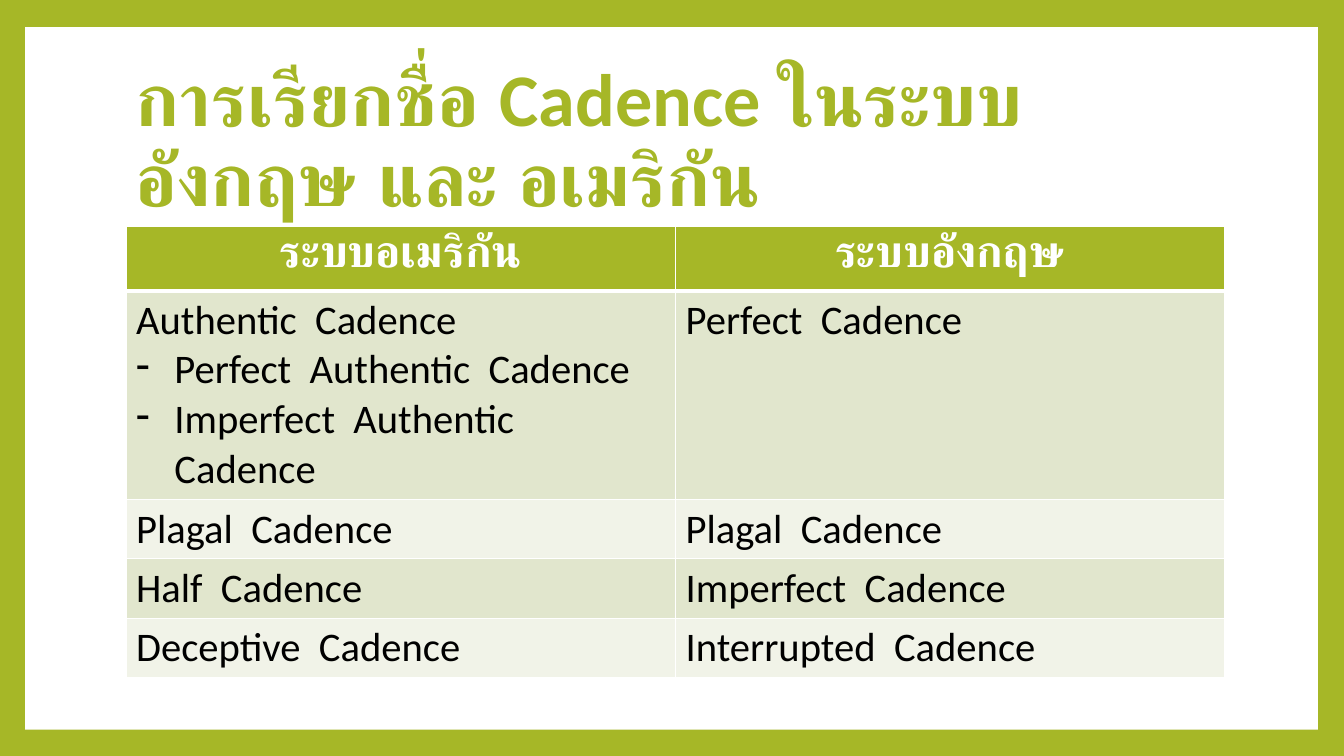
import pptx
import pptx.util
import pptx.dml.color
import pptx.enum.shapes
import pptx.enum.text
import pptx.oxml
import pptx.oxml.ns
from dataclasses import dataclass
from lxml import etree

Inches = pptx.util.Inches
Pt = pptx.util.Pt


@dataclass(frozen=True)
class Theme:
    green: str = "A6B727"
    band_dark: str = "E1E6CD"
    band_light: str = "F1F3E8"
    white: str = "FFFFFF"
    black: str = "000000"
    font: str = "Calibri"
    title_size: int = 53
    header_size: int = 32
    body_size: int = 29


THEME = Theme()

# American name (bulleted lines start with "- "), British name
HEADER = ("ระบบอเมริกัน", "ระบบอังกฤษ")
CADENCES = [
    ("Authentic  Cadence\n- Perfect  Authentic  Cadence\n- Imperfect  Authentic  Cadence",
     "Perfect  Cadence"),
    ("Plagal  Cadence", "Plagal  Cadence"),
    ("Half  Cadence", "Imperfect  Cadence"),
    ("Deceptive  Cadence", "Interrupted  Cadence"),
]
ROW_HEIGHTS = [0.54, 2.07, 0.59, 0.59, 0.59]


def rgb(color):
    return pptx.dml.color.RGBColor.from_string(color)


def style_runs(paragraph, size, color, bold=False):
    for run in paragraph.runs:
        run.font.name = THEME.font
        run.font.size = Pt(size)
        run.font.bold = bold
        run.font.color.rgb = rgb(color)


def add_dash(paragraph):
    properties = paragraph._p.get_or_add_pPr()
    properties.set("marL", str(Inches(0.38)))
    properties.set("indent", str(-Inches(0.38)))
    bullet = etree.SubElement(properties, pptx.oxml.ns.qn("a:buChar"))
    bullet.set("char", "-")


def set_cell(cell, fill, bottom_width=1):
    # Borders come before the fill in the cell properties
    properties = cell._tc.get_or_add_tcPr()
    for side, width in (("L", 1), ("R", 1), ("T", 1), ("B", bottom_width)):
        properties.append(pptx.oxml.parse_xml(
            f'<a:ln{side} {pptx.oxml.ns.nsdecls("a")} w="{Pt(width)}"><a:solidFill>'
            f'<a:srgbClr val="{THEME.white}"/></a:solidFill></a:ln{side}>'))
    cell.fill.solid()
    cell.fill.fore_color.rgb = rgb(fill)


def draw_frame(slide, left, top, width, height):
    slide.background.fill.solid()
    slide.background.fill.fore_color.rgb = rgb(THEME.green)
    panel = slide.shapes.add_shape(
        pptx.enum.shapes.MSO_SHAPE.RECTANGLE,
        Inches(left), Inches(top), Inches(width), Inches(height))
    panel.shadow.inherit = False
    panel.fill.solid()
    panel.fill.fore_color.rgb = rgb(THEME.white)
    panel.line.fill.background()


def draw_title(slide, left, top, width, height):
    title = slide.shapes.add_textbox(
        Inches(left), Inches(top), Inches(width), Inches(height)).text_frame
    title.word_wrap = True
    title.vertical_anchor = pptx.enum.text.MSO_ANCHOR.MIDDLE
    title.text = "การเรียกชื่อ Cadence ในระบบอังกฤษ และ อเมริกัน"
    title.paragraphs[0].line_spacing = 0.9
    style_runs(title.paragraphs[0], THEME.title_size, THEME.green, bold=True)


def draw_cadence_table(slide, left, top, width):
    rows = [HEADER] + CADENCES
    table = slide.shapes.add_table(
        len(rows), len(HEADER), Inches(left), Inches(top),
        Inches(width), Inches(sum(ROW_HEIGHTS))).table
    for column in table.columns:
        column.width = Inches(width / len(HEADER))
    for row, height in zip(table.rows, ROW_HEIGHTS):
        row.height = Inches(height)

    # Header
    for cell, system in zip(table.rows[0].cells, HEADER):
        set_cell(cell, THEME.green, bottom_width=3)
        cell.text_frame.text = system
        heading = cell.text_frame.paragraphs[0]
        heading.alignment = pptx.enum.text.PP_ALIGN.CENTER
        style_runs(heading, THEME.header_size, THEME.white, bold=True)

    # Banded cadence names
    for index, names in enumerate(CADENCES, start=1):
        band = THEME.band_dark if index % 2 else THEME.band_light
        for cell, name in zip(table.rows[index].cells, names):
            set_cell(cell, band)
            lines = name.split("\n")
            cell.text_frame.text = "\n".join(line.removeprefix("- ") for line in lines)
            for paragraph, line in zip(cell.text_frame.paragraphs, lines):
                if line.startswith("- "):
                    add_dash(paragraph)
                style_runs(paragraph, THEME.body_size, THEME.black)


def main():
    presentation = pptx.Presentation()
    presentation.slide_width = Inches(13.33)
    presentation.slide_height = Inches(7.5)
    slide = presentation.slides.add_slide(presentation.slide_layouts[6])
    draw_frame(slide, 0.25, 0.27, 12.82, 6.97)
    draw_title(slide, 1.25, 0.67, 10.8, 1.48)
    draw_cadence_table(slide, 1.25, 2.25, 10.9)
    presentation.save("out.pptx")


if __name__ == "__main__":
    main()
